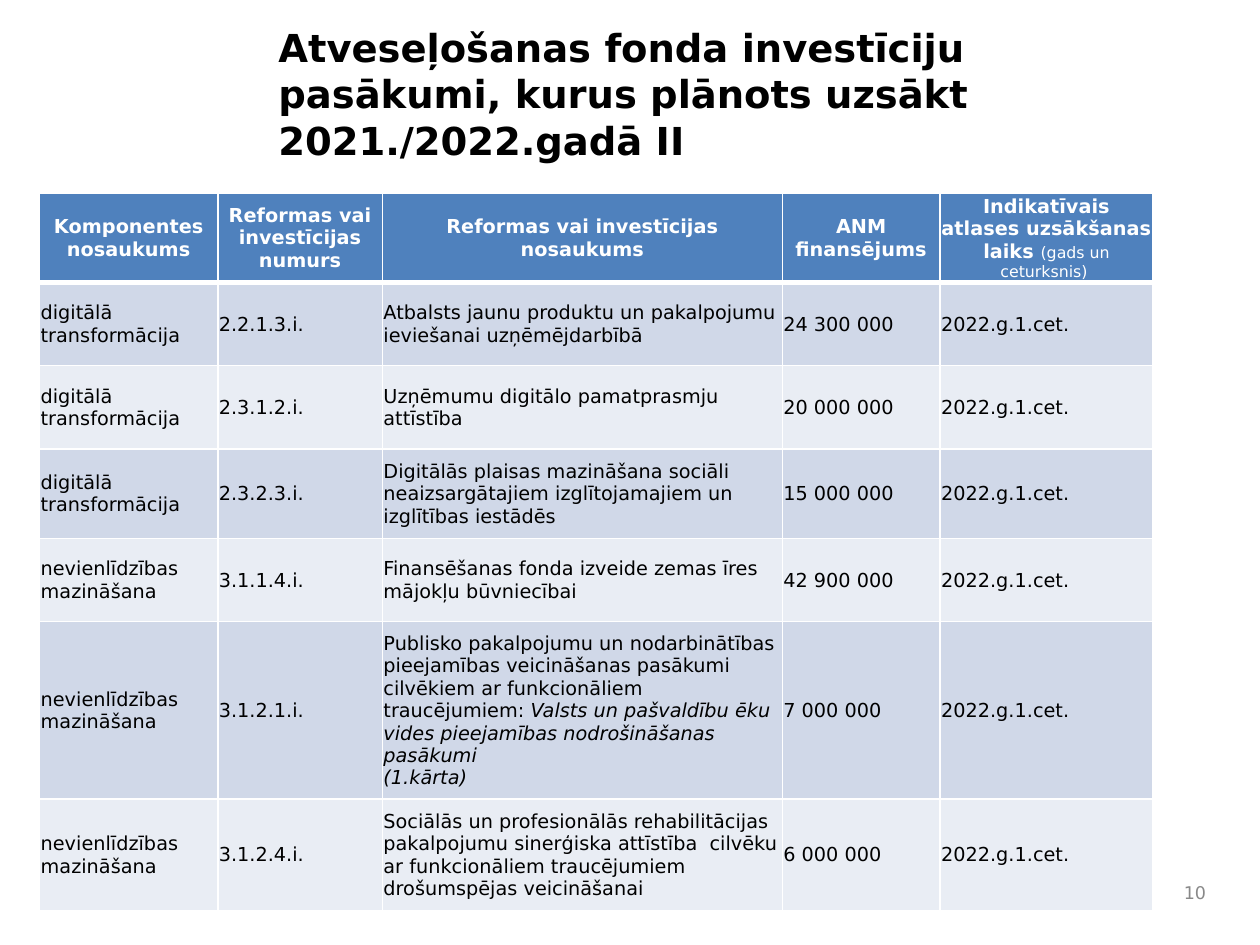
import pptx
import pptx.util
import pptx.dml.color
import pptx.enum.text
import pptx.oxml
import pptx.oxml.ns

Cm = pptx.util.Cm
RGB = pptx.dml.color.RGBColor
ALIGN = pptx.enum.text.PP_ALIGN
ANCHOR = pptx.enum.text.MSO_ANCHOR

FONT = "DejaVu Sans"
BLACK = RGB(0x00, 0x00, 0x00)
WHITE = RGB(0xFF, 0xFF, 0xFF)
GREY = RGB(0x89, 0x89, 0x89)
BLUE = RGB(0x4F, 0x81, 0xBD)
BANDS = RGB(0xD0, 0xD8, 0xE8), RGB(0xE9, 0xED, 0xF4)

WIDTHS = 3.59, 3.32, 8.06, 3.18, 4.29
HEIGHTS = 1.8, 1.68, 1.68, 1.8, 1.68, 3.58, 2.24

DIGITAL = "digitālā transformācija"
EQUAL = "nevienlīdzības mazināšana"
START = "2022.g.1.cet."
SMALL = {"size": 9, "bold": False}
SLANT = {"italic": True}

HEADS = [
    "Komponentes nosaukums",
    "Reformas vai investīcijas numurs",
    "Reformas vai investīcijas nosaukums",
    "ANM finansējums",
    [[("Indikatīvais atlases uzsākšanas laiks ", {}), ("(gads un ceturksnis) ", SMALL)]],
]
ACCESS = [
    [
        ("Publisko pakalpojumu un nodarbinātības pieejamības veicināšanas pasākumi "
         "cilvēkiem ar funkcionāliem traucējumiem: ", {}),
        ("Valsts un pašvaldību ēku vides pieejamības nodrošināšanas pasākumi", SLANT),
    ],
    [("(1.kārta)", SLANT)],
]
ITEMS = [
    (DIGITAL, "2.2.1.3.i.",
     "Atbalsts jaunu produktu un pakalpojumu ieviešanai uzņēmējdarbībā", "24 300 000"),
    (DIGITAL, "2.3.1.2.i.", "Uzņēmumu digitālo pamatprasmju attīstība", "20 000 000"),
    (DIGITAL, "2.3.2.3.i.",
     "Digitālās plaisas mazināšana sociāli neaizsargātajiem izglītojamajiem "
     "un izglītības iestādēs", "15 000 000"),
    (EQUAL, "3.1.1.4.i.",
     "Finansēšanas fonda izveide zemas īres mājokļu būvniecībai", "42 900 000"),
    (EQUAL, "3.1.2.1.i.", ACCESS, "7 000 000"),
    (EQUAL, "3.1.2.4.i.",
     "Sociālās un profesionālās rehabilitācijas pakalpojumu sinerģiska attīstība  "
     "cilvēku ar funkcionāliem traucējumiem drošumspējas veicināšanai", "6 000 000"),
]


def write(frame, text, size=11, color=BLACK, bold=False, italic=False, align=ALIGN.LEFT):
    base = {"size": size, "color": color, "bold": bold, "italic": italic}
    paras = [[(text, {})]] if isinstance(text, str) else text
    frame.word_wrap = True
    for i, runs in enumerate(paras):
        para = frame.add_paragraph() if i else frame.paragraphs[0]
        para.alignment = align
        for words, extra in runs:
            look = {**base, **extra}
            run = para.add_run()
            run.text = words
            run.font.name = FONT
            run.font.size = pptx.util.Pt(look["size"])
            run.font.color.rgb = look["color"]
            run.font.bold = look["bold"]
            run.font.italic = look["italic"]


class Deck:
    def __init__(self):
        self.file = pptx.Presentation()
        self.file.slide_width = Cm(25.4)
        self.file.slide_height = Cm(19.05)
        self.slide = self.file.slides.add_slide(self.file.slide_layouts[5])

    def title(self, text, x, y, w, h):
        shape = self.slide.shapes.title
        shape.left, shape.top, shape.width, shape.height = map(Cm, (x, y, w, h))
        frame = shape.text_frame
        frame.vertical_anchor = ANCHOR.TOP
        frame.auto_size = pptx.enum.text.MSO_AUTO_SIZE.NONE
        write(frame, text, size=22, bold=True)

    def label(self, text, x, y, w, h, **look):
        frame = self.slide.shapes.add_textbox(*map(Cm, (x, y, w, h))).text_frame
        frame.vertical_anchor = ANCHOR.MIDDLE
        write(frame, text, **look)

    def edge(self, cell, side, width):
        line = pptx.oxml.parse_xml(
            f'<a:ln{side} {pptx.oxml.ns.nsdecls("a")} w="{pptx.util.Pt(width)}">'
            f'<a:solidFill><a:srgbClr val="{WHITE}"/></a:solidFill></a:ln{side}>'
        )
        cell._tc.get_or_add_tcPr().append(line)

    def cell(self, cell, text, fill, top=1, base=1, **look):
        for side, width in (("L", 1), ("R", 1), ("T", top), ("B", base)):
            self.edge(cell, side, width)
        cell.fill.solid()
        cell.fill.fore_color.rgb = fill
        cell.margin_left = cell.margin_right = cell.margin_top = Cm(0.02)
        cell.margin_bottom = 0
        cell.vertical_anchor = ANCHOR.MIDDLE
        write(cell.text_frame, text, **look)

    def table(self, heads, items, x, y):
        size = Cm(sum(WIDTHS)), Cm(sum(HEIGHTS))
        grid = self.slide.shapes.add_table(
            len(HEIGHTS), len(WIDTHS), Cm(x), Cm(y), *size
        ).table
        for col, width in zip(grid.columns, WIDTHS):
            col.width = Cm(width)
        for row, height in zip(grid.rows, HEIGHTS):
            row.height = Cm(height)
        for c, text in enumerate(heads):
            self.cell(grid.cell(0, c), text, BLUE, base=3,
                      color=WHITE, bold=True, align=ALIGN.CENTER)
        for r, item in enumerate(items):
            for c, text in enumerate((*item, START)):
                self.cell(grid.cell(r + 1, c), text, BANDS[r % 2], top=1 if r else 3)


def main():
    deck = Deck()
    deck.title("Atveseļošanas fonda investīciju pasākumi, kurus plānots uzsākt "
               "2021./2022.gadā II", 5.36, 0.36, 16.94, 2.87)
    deck.label("10", 23.39, 17.58, 1.17, 0.84, size=10, color=GREY, align=ALIGN.RIGHT)
    deck.table(HEADS, ITEMS, 0.8, 3.89)
    deck.file.save("out.pptx")


if __name__ == "__main__":
    main()
